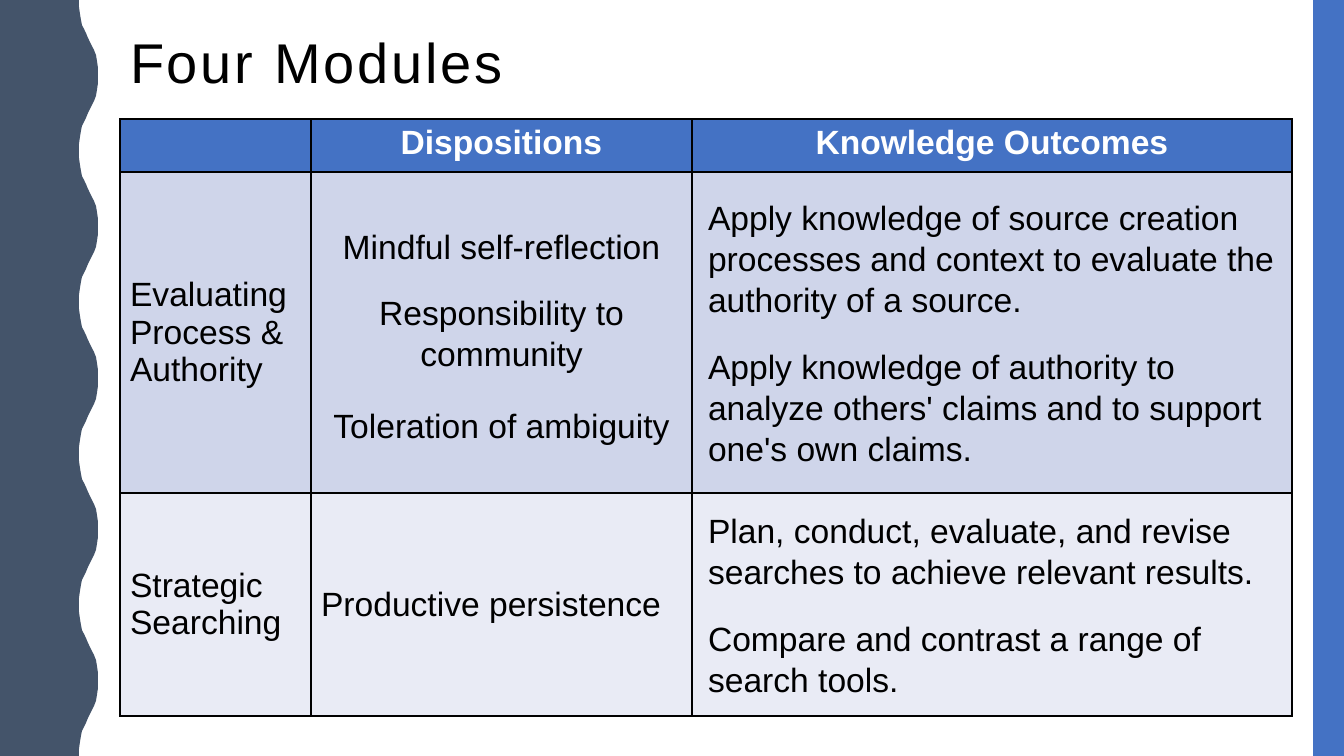
from lxml import etree
from pptx import Presentation
from pptx.dml.color import RGBColor
from pptx.enum.shapes import MSO_SHAPE
from pptx.enum.text import MSO_ANCHOR, MSO_AUTO_SIZE, PP_ALIGN
from pptx.oxml.ns import qn
from pptx.util import Emu, Pt

RECTANGLE = MSO_SHAPE.RECTANGLE
TOP, MIDDLE = MSO_ANCHOR.TOP, MSO_ANCHOR.MIDDLE
LEFT, CENTER = PP_ALIGN.LEFT, PP_ALIGN.CENTER
NO_AUTOFIT = MSO_AUTO_SIZE.NONE

EMU_PER_PX = 914400 / 100.8
SLIDE_W, SLIDE_H = 1344, 756
FONT = "Arial"
BLACK, WHITE = "000000", "FFFFFF"
SLATE, BLUE = "44546A", "4472C4"
BAND_DARK, BAND_LIGHT = "CFD5EA", "E9EBF5"

# Half a wave of the left edge, as x and y from the wave's top
HALF_WAVE = [(79, 0), (79, 7), (80, 14), (81, 20), (82, 25), (84, 29), (86, 33),
             (88, 38), (90, 42), (92, 46), (94, 50), (96, 55), (97, 61), (98, 68),
             (98, 76)]
WAVE_COUNT = 5

COLUMN_WIDTHS = [191, 381, 600]
ROW_HEIGHTS = [53, 321, 223]
HEADERS = ["", "Dispositions", "Knowledge Outcomes"]
# Module, dispositions as (text, line spacing), outcomes, band colour
MODULES = [
    ("Evaluating Process & Authority",
     [("Mindful self-reflection", 1.25),
      ("Responsibility to community", 1.1),
      ("Toleration of ambiguity", 1.25)],
     ["Apply knowledge of source creation processes and context to evaluate "
      "the authority of a source.",
      "Apply knowledge of authority to analyze others' claims and to support "
      "one's own claims."],
     BAND_DARK),
    ("Strategic Searching",
     [("Productive persistence", None)],
     ["Plan, conduct, evaluate, and revise searches to achieve relevant results.",
      "Compare and contrast a range of search tools."],
     BAND_LIGHT),
]


def px(length):
    return Emu(round(length * EMU_PER_PX))


def rgb(value):
    return RGBColor.from_string(value)


def paint(shape, color):
    shape.shadow.inherit = False
    shape.fill.solid()
    shape.fill.fore_color.rgb = rgb(color)
    shape.line.fill.background()


def add_run(paragraph, text, size, color=BLACK, bold=False):
    run = paragraph.add_run()
    run.text = text
    run.font.name = FONT
    run.font.size = Pt(size)
    run.font.bold = bold
    run.font.color.rgb = rgb(color)
    return run


def add_wave_band(slide, left, top, height):
    period = height / WAVE_COUNT
    wave = HALF_WAVE + [(x, period - y) for x, y in HALF_WAVE[-2:0:-1]]
    edge = [(left + x, top + i * period + y)
            for i in range(WAVE_COUNT) for x, y in wave]
    edge += [(left + HALF_WAVE[0][0], top + height), (left, top + height)]
    builder = slide.shapes.build_freeform(left, top, scale=EMU_PER_PX)
    builder.add_line_segments(edge, close=True)
    paint(builder.convert_to_shape(), SLATE)


def add_side_bar(slide, left, top, width, height):
    bar = slide.shapes.add_shape(RECTANGLE, px(left), px(top), px(width), px(height))
    paint(bar, BLUE)


def place_title(slide, left, top, width, height):
    title = slide.shapes.title
    title.left, title.top = px(left), px(top)
    title.width, title.height = px(width), px(height)
    frame = title.text_frame
    frame.auto_size = NO_AUTOFIT
    frame.vertical_anchor = TOP
    heading = frame.paragraphs[0]
    heading.alignment = LEFT
    heading.line_spacing = 0.9
    run = add_run(heading, "Four Modules", 40)
    run.font._element.set("spc", "200")


def format_cell(cell, color, anchor):
    cell.vertical_anchor = anchor
    properties = cell._tc.get_or_add_tcPr()
    for side in ("a:lnL", "a:lnR", "a:lnT", "a:lnB"):
        border = etree.SubElement(properties, qn(side), w=str(Pt(1)))
        fill = etree.SubElement(border, qn("a:solidFill"))
        etree.SubElement(fill, qn("a:srgbClr"), val=BLACK)
    cell.fill.solid()
    cell.fill.fore_color.rgb = rgb(color)


def cell_paragraphs(cell, count):
    frame = cell.text_frame
    return [frame.paragraphs[0]] + [frame.add_paragraph() for _ in range(count - 1)]


def fill_dispositions(cell, dispositions):
    paragraphs = cell_paragraphs(cell, len(dispositions))
    for paragraph, (text, spacing) in zip(paragraphs, dispositions):
        if spacing:
            paragraph.alignment = CENTER
            paragraph.line_spacing = spacing
            paragraph.space_after = Pt(18)
        add_run(paragraph, text, 24)


def fill_outcomes(cell, outcomes):
    for paragraph, text in zip(cell_paragraphs(cell, len(outcomes)), outcomes):
        properties = paragraph._p.get_or_add_pPr()
        properties.set("marL", str(px(6)))
        properties.set("indent", "0")
        paragraph.line_spacing = 1.1
        paragraph.space_before = Pt(6)
        paragraph.space_after = Pt(12)
        add_run(paragraph, text, 24)


def add_modules_table(slide, left, top):
    frame = slide.shapes.add_table(
        len(ROW_HEIGHTS), len(COLUMN_WIDTHS), px(left), px(top),
        px(sum(COLUMN_WIDTHS)), px(sum(ROW_HEIGHTS)))
    table = frame.table
    for column, width in zip(table.columns, COLUMN_WIDTHS):
        column.width = px(width)
    for row, height in zip(table.rows, ROW_HEIGHTS):
        row.height = px(height)

    # Header row
    for cell, header in zip(table.rows[0].cells, HEADERS):
        format_cell(cell, BLUE, TOP)
        if header:
            paragraph = cell.text_frame.paragraphs[0]
            paragraph.alignment = CENTER
            add_run(paragraph, header, 24, WHITE, bold=True)

    # One row for each module
    for index, (module, dispositions, outcomes, band) in enumerate(MODULES, 1):
        cells = list(table.rows[index].cells)
        for cell in cells:
            format_cell(cell, band, MIDDLE)
        add_run(cells[0].text_frame.paragraphs[0], module, 24)
        fill_dispositions(cells[1], dispositions)
        fill_outcomes(cells[2], outcomes)


def main():
    deck = Presentation()
    deck.slide_width, deck.slide_height = px(SLIDE_W), px(SLIDE_H)
    slide = deck.slides.add_slide(deck.slide_layouts.get_by_name("Title Only"))
    slide.background.fill.solid()
    slide.background.fill.fore_color.rgb = rgb(WHITE)
    add_wave_band(slide, 0, 0, SLIDE_H)
    add_side_bar(slide, 1313, 0, 31, SLIDE_H)
    place_title(slide, 120, 30, 1122, 88)
    add_modules_table(slide, 120, 119)
    deck.save("out.pptx")


if __name__ == "__main__":
    main()
